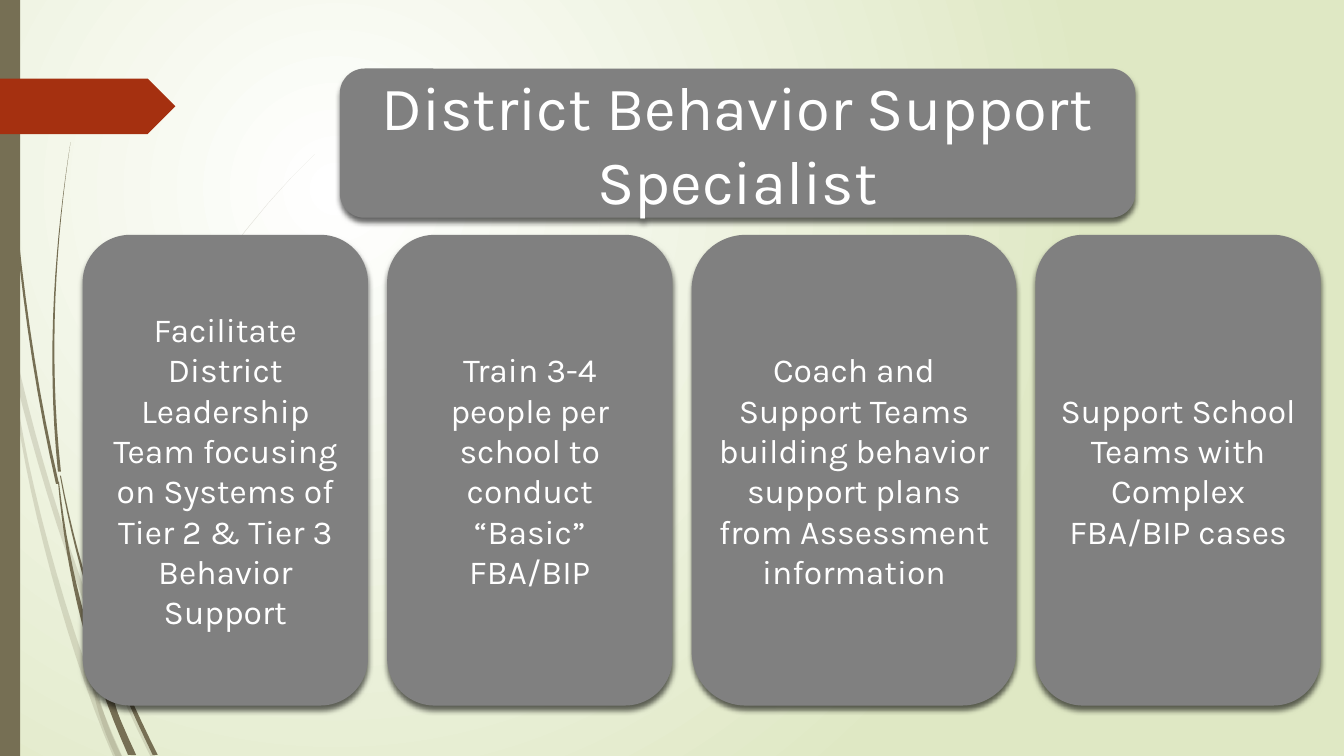
import dataclasses

import lxml.etree
import pptx
import pptx.dml.color
import pptx.enum.shapes
import pptx.enum.text
import pptx.oxml
import pptx.oxml.ns
import pptx.util

PX = 9144  # EMU per px: 100 px to the inch
STEPS = 16
SHAPE = pptx.enum.shapes.MSO_SHAPE


@dataclasses.dataclass(frozen=True)
class Theme:
    centre: str = "FFFFFF"
    edge: str = "DFE8C4"
    grass: str = "766F54"
    banner: str = "A53010"
    card: str = "808080"
    text: str = "FFFFFF"
    shadow: str = "000000"
    font: str = "Karla"
    title_size: int = 44
    card_size: int = 24
    faint: int = 20


THEME = Theme()

# Each blade: four points it passes through, its width at the tip and at the root.
FAINT_BLADES = [
    ([(0, 290), (35, 440), (86, 598), (152, 751)], 6, 5),
    ([(12, 355), (29, 470), (67, 615), (117, 751)], 1, 9),
    ([(312, 153), (196, 295), (113, 455), (87, 590)], 0, 3),
    ([(87, 595), (89, 645), (97, 695), (118, 751)], 2, 6),
]
DARK_BLADES = [
    ([(4, 0), (10, 150), (27, 315), (57, 480)], 1, 3),
    ([(58, 478), (72, 570), (96, 660), (131, 749)], 1, 8),
    ([(60, 472), (83, 570), (114, 660), (154, 749)], 1, 5),
    ([(70, 141), (58, 240), (53, 350), (59, 468)], 0, 3),
    ([(107, 647), (110, 685), (118, 716), (132, 749)], 1, 5),
]
CARDS = [
    (283, "Facilitate District Leadership Team focusing on Systems of Tier 2 & Tier 3 Behavior Support"),
    (283, "Train 3-4 people per school to conduct “Basic” FBA/BIP"),
    (322, "Coach and Support Teams building behavior support plans from Assessment information"),
    (283, "Support School Teams with Complex FBA/BIP cases"),
]


def sub(parent, tag, **attrs):
    """Append a DrawingML child element."""
    return lxml.etree.SubElement(parent, pptx.oxml.ns.qn(tag), {k: str(v) for k, v in attrs.items()})


def paint(sp, colour, opacity=100):
    sp.shadow.inherit = False
    sp.line.fill.background()
    sp.fill.solid()
    sp.fill.fore_color.rgb = pptx.dml.color.RGBColor.from_string(colour)
    if opacity < 100:
        clr = sp._element.spPr.find(".//" + pptx.oxml.ns.qn("a:srgbClr"))
        sub(clr, "a:alpha", val=opacity * 1000)


def set_background(s):
    """Fill the slide with a circular gradient centred in its upper left quarter."""
    s.background.fill.gradient()
    grad = s.background._cSld.find(".//" + pptx.oxml.ns.qn("a:gradFill"))
    for child in list(grad):
        grad.remove(child)
    stops = sub(grad, "a:gsLst")
    for pos, colour in ((0, THEME.centre), (100000, THEME.edge)):
        sub(sub(stops, "a:gs", pos=pos), "a:srgbClr", val=colour)
    sub(sub(grad, "a:path", path="circle"), "a:fillToRect", l=50000, t=50000, r=100000, b=100000)


def point_at(points, t):
    """Return the point at t (0 to 1) of the smooth curve through evenly timed points."""
    last = len(points) - 1
    x = y = 0
    for i, (px, py) in enumerate(points):
        weight = 1
        for j in range(len(points)):
            if j != i:
                weight *= (t * last - j) / (i - j)
        x += weight * px
        y += weight * py
    return x, y


def add_blade(shapes, points, tip, root, opacity):
    """Draw a curve as a closed outline that widens from tip to root."""
    left, right = [], []
    for step in range(STEPS + 1):
        t = step / STEPS
        x, y = point_at(points, t)
        half = (tip + (root - tip) * t) / 2
        left.append((round((x - half) * PX), round(y * PX)))
        right.append((round((x + half) * PX), round(y * PX)))
    builder = shapes.build_freeform(*left[0], scale=1.0)
    builder.add_line_segments(left[1:] + right[::-1], close=True)
    paint(builder.convert_to_shape(), THEME.grass, opacity)


def add_grass(s, blades, opacity=100):
    grass = s.shapes.add_group_shape()
    for points, tip, root in blades:
        add_blade(grass.shapes, points, tip, root, opacity)


def add_box(s, kind, x, y, w, h, colour):
    sp = s.shapes.add_shape(kind, x * PX, y * PX, w * PX, h * PX)
    paint(sp, colour)
    return sp


def add_card(s, x, y, w, h, text, size):
    """Add a rounded, softly shadowed card with centred text."""
    sp = add_box(s, SHAPE.ROUNDED_RECTANGLE, x, y, w, h, THEME.card)
    effects = sp._element.spPr.find(pptx.oxml.ns.qn("a:effectLst"))
    shadow = sub(effects, "a:outerShdw", blurRad=50800, dist=38100, dir=5400000, rotWithShape=0)
    sub(sub(shadow, "a:srgbClr", val=THEME.shadow), "a:alpha", val=60000)
    tf = sp.text_frame
    tf.word_wrap = True
    tf.vertical_anchor = pptx.enum.text.MSO_ANCHOR.MIDDLE
    p = tf.paragraphs[0]
    p.alignment = pptx.enum.text.PP_ALIGN.CENTER
    r = p.add_run()
    r.text = text
    r.font.name = THEME.font
    r.font.size = pptx.util.Pt(size)
    r.font.color.rgb = pptx.dml.color.RGBColor.from_string(THEME.text)


def main():
    prs = pptx.Presentation()
    prs.slide_width, prs.slide_height = 1333 * PX, 750 * PX
    s = prs.slides.add_slide(prs.slide_layouts[6])
    set_background(s)
    add_grass(s, FAINT_BLADES, THEME.faint)
    add_grass(s, DARK_BLADES)
    add_box(s, SHAPE.RECTANGLE, 0, 0, 20, 750, THEME.grass)
    add_box(s, SHAPE.PENTAGON, 0, 78, 174, 55, THEME.banner)
    add_card(s, 337, 68, 789, 148, "District Behavior Support Specialist", THEME.title_size)
    x, gap = 82, 19
    for w, text in CARDS:
        add_card(s, x, 233, w, 467, text, THEME.card_size)
        x += w + gap
    prs.save("out.pptx")


if __name__ == "__main__":
    main()
